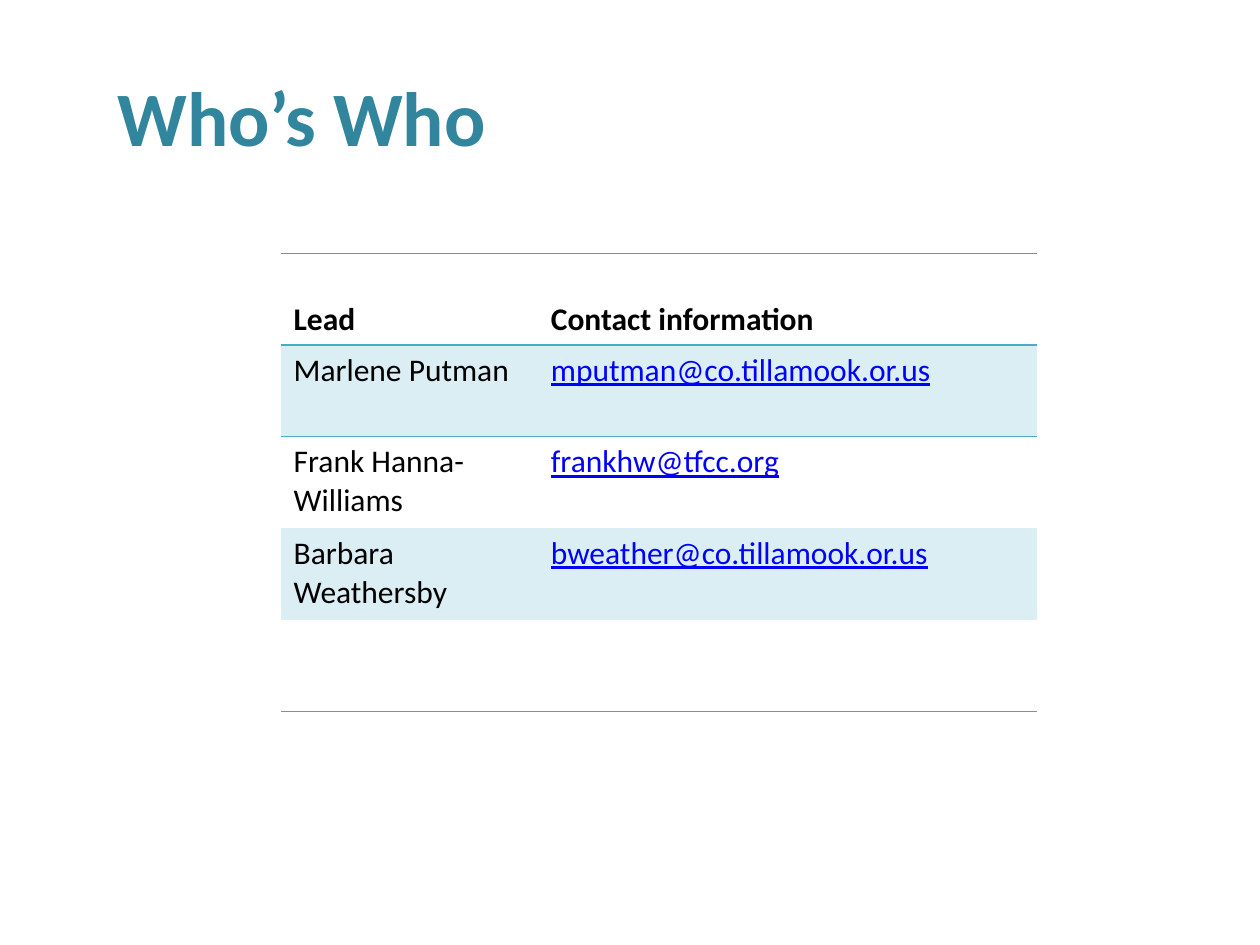
from dataclasses import dataclass
from typing import Optional

from lxml import etree
from pptx import Presentation
from pptx import util as u
from pptx.dml.color import RGBColor
from pptx.enum import text
from pptx.oxml.ns import qn

PLAIN_TABLE_STYLE = "{2D5ABB26-0587-4C30-8999-92F81FD0307C}"


@dataclass(frozen=True)
class Theme:
    font: str = "Calibri"
    title_size: float = 44
    body_size: float = 18
    title: str = "31859C"
    ink: str = "000000"
    link: str = "0000FF"
    band: str = "DBEEF4"
    rule: str = "4BACC6"
    edge: str = "8C8C8C"
    rule_width: float = 1
    edge_width: float = 0.5


@dataclass(frozen=True)
class Contact:
    lead: str
    email: str


@dataclass(frozen=True)
class Border:
    color: str
    width: float


THEME = Theme()
EDGE = Border(THEME.edge, THEME.edge_width)
RULE = Border(THEME.rule, THEME.rule_width)
HEADINGS = ("Lead", "Contact information")
CONTACTS = (
    Contact("Marlene Putman", "mputman@co.tillamook.or.us"),
    Contact("Frank Hanna-Williams", "frankhw@tfcc.org"),
    Contact("Barbara Weathersby", "bweather@co.tillamook.or.us"),
)
COLUMN_WIDTHS = (147, 285)
ROW_HEIGHT = 52.4


def write(frame, content: str, size: float, color: str,
          bold: bool = False, underline: bool = False) -> None:
    frame.text = content
    for run in frame.paragraphs[0].runs:
        run.font.name = THEME.font
        run.font.size = u.Pt(size)
        run.font.bold = bold
        run.font.underline = underline
        run.font.color.rgb = RGBColor.from_string(color)


def set_border(cell, tag: str, border: Optional[Border]) -> None:
    if border is None:
        return
    line = etree.SubElement(cell._tc.get_or_add_tcPr(), qn(tag),
                            w=str(u.Pt(border.width)))
    fill = etree.SubElement(line, qn("a:solidFill"))
    etree.SubElement(fill, qn("a:srgbClr"), val=border.color)


def add_title(slide, content: str) -> None:
    title = slide.shapes.title
    title.left, title.top = u.Pt(59.8), u.Pt(20.9)
    title.width, title.height = u.Pt(635.8), u.Pt(90)
    title.text_frame.vertical_anchor = text.MSO_ANCHOR.MIDDLE
    write(title.text_frame, content, THEME.title_size, THEME.title, bold=True)
    title.text_frame.paragraphs[0].alignment = text.PP_ALIGN.LEFT


def add_contact_table(slide) -> None:
    rows = [HEADINGS, *((c.lead, c.email) for c in CONTACTS), ("", "")]
    last = len(rows) - 1
    frame = slide.shapes.add_table(
        len(rows), len(HEADINGS), u.Pt(160.6), u.Pt(144.7),
        u.Pt(sum(COLUMN_WIDTHS)), u.Pt(ROW_HEIGHT * len(rows)))
    table = frame.table
    table.horz_banding = False
    table._tbl.tblPr.find(qn("a:tableStyleId")).text = PLAIN_TABLE_STYLE
    for column, width in zip(table.columns, COLUMN_WIDTHS):
        column.width = u.Pt(width)
    tops = {0: EDGE, 1: RULE}
    bottoms = {0: RULE, last: EDGE}
    for row_index, values in enumerate(rows):
        table.rows[row_index].height = u.Pt(ROW_HEIGHT)
        header = row_index == 0
        for column_index, value in enumerate(values):
            cell = table.cell(row_index, column_index)
            link = column_index == 1 and not header
            if value:
                write(cell.text_frame, value, THEME.body_size,
                      THEME.link if link else THEME.ink,
                      bold=header, underline=link)
            cell.vertical_anchor = (text.MSO_ANCHOR.BOTTOM if header
                                    else text.MSO_ANCHOR.TOP)
            set_border(cell, "a:lnT", tops.get(row_index))
            set_border(cell, "a:lnB", bottoms.get(row_index))
            if row_index % 2:
                cell.fill.solid()
                cell.fill.fore_color.rgb = RGBColor.from_string(THEME.band)
            else:
                cell.fill.background()


def main() -> None:
    presentation = Presentation()
    presentation.slide_width = u.Pt(720)
    presentation.slide_height = u.Pt(540)
    slide = presentation.slides.add_slide(presentation.slide_layouts[5])
    add_title(slide, "Who’s Who")
    add_contact_table(slide)
    presentation.save("out.pptx")


if __name__ == "__main__":
    main()
